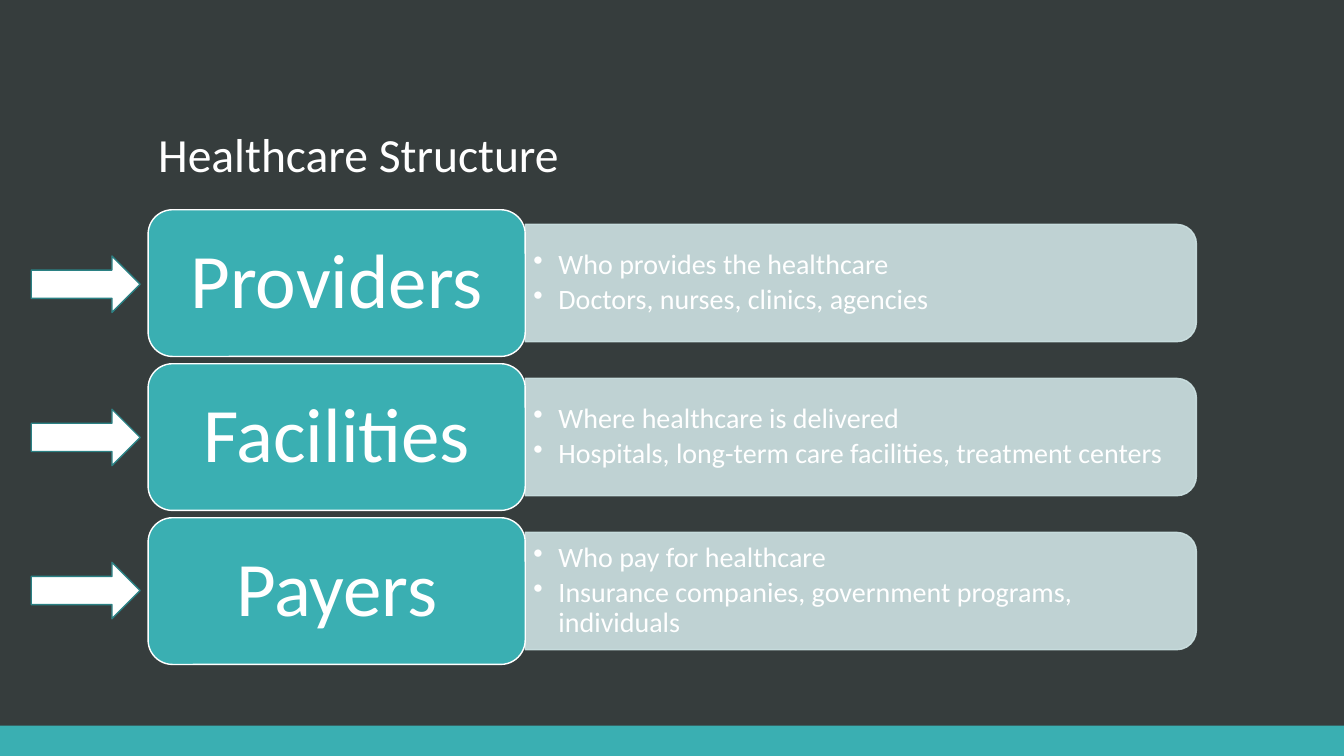
from dataclasses import dataclass

from lxml.etree import SubElement
from pptx import Presentation
from pptx.dml.color import RGBColor
from pptx.enum.shapes import MSO_SHAPE
from pptx.enum.text import MSO_ANCHOR, PP_ALIGN
from pptx.oxml.ns import qn
from pptx.util import Pt


@dataclass(frozen=True)
class Theme:
    font: str = "Calibri"
    background: RGBColor = RGBColor(0x36, 0x3D, 0x3D)
    teal: RGBColor = RGBColor(0x3A, 0xAF, 0xB2)
    dark_teal: RGBColor = RGBColor(0x2B, 0x81, 0x84)
    pale_teal: RGBColor = RGBColor(0xCE, 0xE3, 0xE4)
    white: RGBColor = RGBColor(0xFF, 0xFF, 0xFF)
    title_size: int = 34
    heading_size: int = 55
    bullet_size: int = 20


theme = Theme()


def write_text(shape, lines, size, align=PP_ALIGN.LEFT, anchor=MSO_ANCHOR.MIDDLE,
               margins=(7.2, 3.6), bullets=False, space_after=0):
    frame = shape.text_frame
    frame.word_wrap = True
    frame.vertical_anchor = anchor
    frame.margin_left = frame.margin_right = Pt(margins[0])
    frame.margin_top = frame.margin_bottom = Pt(margins[1])
    frame.text = "\n".join(lines)
    for paragraph in frame.paragraphs:
        paragraph.alignment = align
        paragraph.line_spacing = 0.9
        paragraph.space_after = Pt(space_after)
        if bullets:
            properties = paragraph._p.get_or_add_pPr()
            properties.set("marL", str(Pt(18)))
            properties.set("indent", str(Pt(-18)))
            SubElement(properties, qn("a:buChar"), char="•")
        paragraph.font.name = theme.font
        paragraph.font.size = Pt(size)
        paragraph.font.color.rgb = theme.white


def add_block(kind, left, top, width, height, fill, line=None, opacity=100):
    shape = slide.shapes.add_shape(kind, Pt(left), Pt(top), Pt(width), Pt(height))
    shape.shadow.inherit = False
    shape.fill.solid()
    shape.fill.fore_color.rgb = fill
    if line is None:
        shape.line.fill.background()
    else:
        shape.line.color.rgb = line
        shape.line.width = Pt(1)
    if opacity < 100:
        for color in shape._element.spPr.iter(qn("a:srgbClr")):
            SubElement(color, qn("a:alpha"), val=str(opacity * 1000))
    return shape


# Slide and background
presentation = Presentation()
presentation.slide_width, presentation.slide_height = Pt(960), Pt(540)
slide = presentation.slides.add_slide(presentation.slide_layouts[5])
slide.background.fill.solid()
slide.background.fill.fore_color.rgb = theme.background
add_block(MSO_SHAPE.RECTANGLE, 0, 518.4, 960, 21.6, theme.teal)

# Title
title = slide.shapes.title
title.left, title.top, title.width, title.height = Pt(105.8), Pt(36.7), Pt(748.8), Pt(97.2)
write_text(title, ["Healthcare Structure"], theme.title_size, anchor=MSO_ANCHOR.BOTTOM)

# Rows: bullet panel with a heading box
rows = [
    ("Providers", ["Who provides the healthcare", "Doctors, nurses, clinics, agencies"]),
    ("Facilities", ["Where healthcare is delivered",
                    "Hospitals, long-term care facilities, treatment centers"]),
    ("Payers", ["Who pay for healthcare",
                "Insurance companies, government programs, individuals"]),
]
first_top, row_pitch = 149.8, 110
box_left, box_width, box_height = 105.8, 269.4, 104.8
panel_left = box_left + box_width
panel_width, panel_height = 479.4, 83.8

for index, (heading, points) in enumerate(rows):
    top = first_top + index * row_pitch
    middle = top + box_height / 2

    # The panel is turned a quarter so that its round corners face right
    panel = add_block(MSO_SHAPE.ROUND_2_SAME_RECTANGLE,
                      panel_left + (panel_width - panel_height) / 2, middle - panel_width / 2,
                      panel_height, panel_width, theme.pale_teal, theme.pale_teal, opacity=90)
    panel.rotation = 90

    bullet_box = slide.shapes.add_textbox(Pt(panel_left), Pt(middle - 37.8), Pt(475.2), Pt(75.6))
    write_text(bullet_box, points, theme.bullet_size, margins=(5.76, 2.88),
               bullets=True, space_after=3)

    box = add_block(MSO_SHAPE.ROUNDED_RECTANGLE, box_left, top, box_width, box_height,
                    theme.teal, theme.white)
    write_text(box, [heading], theme.heading_size, align=PP_ALIGN.CENTER, margins=(21.6, 13))

# Arrows pointing at the heading boxes
for index in range(len(rows)):
    add_block(MSO_SHAPE.RIGHT_ARROW, 22.3, 182.9 + index * 109.4, 77.8, 40.3,
              theme.white, theme.dark_teal)

presentation.save("out.pptx")
